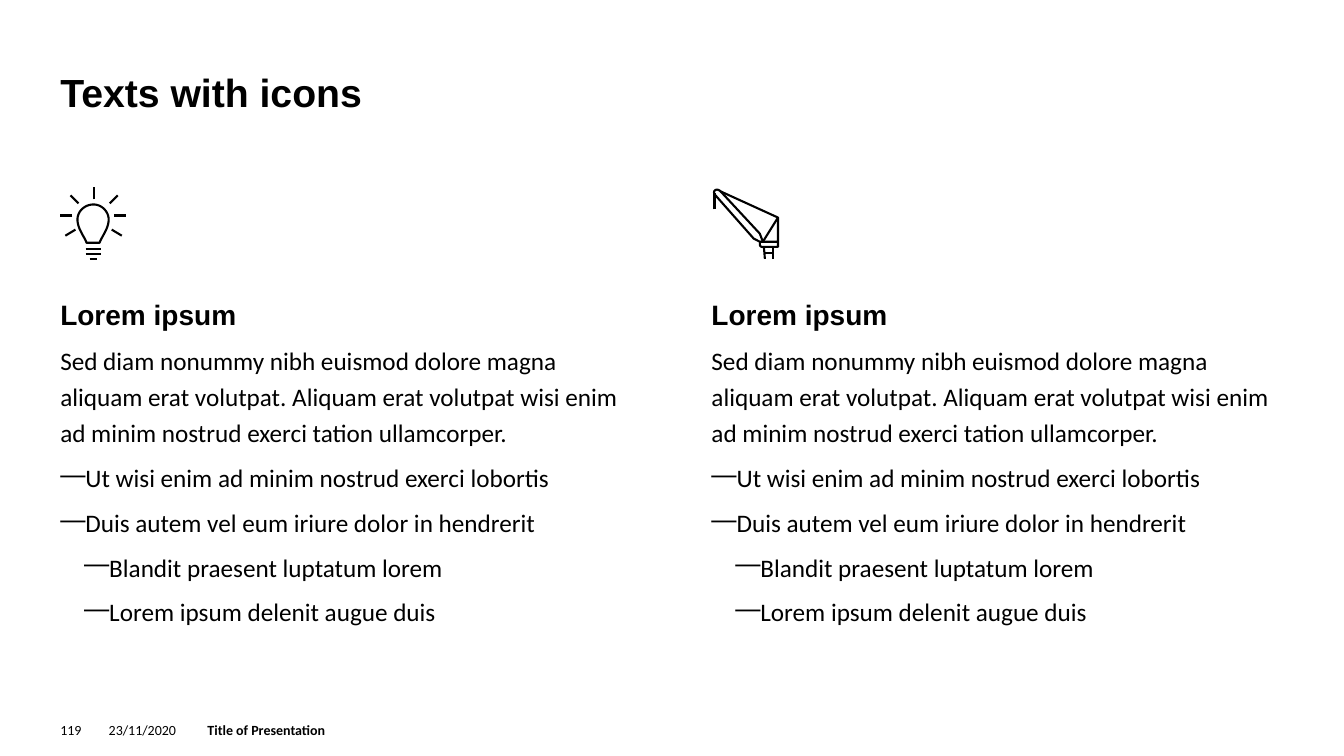
from lxml.etree import SubElement
from pptx import Presentation
from pptx.dml.color import RGBColor
from pptx.enum.shapes import MSO_CONNECTOR
from pptx.enum.text import MSO_ANCHOR, MSO_AUTO_SIZE, PP_ALIGN
from pptx.oxml.ns import qn
from pptx.util import Cm, Pt

TITLE = "Texts with icons"
HEADING = "Lorem ipsum"
BODY = [  # (level, text); levels 2 and 3 carry a dash
    (1, "Sed diam nonummy nibh euismod dolore magna aliquam erat volutpat. "
        "Aliquam erat volutpat wisi enim ad minim nostrud exerci tation ullamcorper."),
    (2, "Ut wisi enim ad minim nostrud exerci lobortis"),
    (2, "Duis autem vel eum iriure dolor in hendrerit"),
    (3, "Blandit praesent luptatum lorem"),
    (3, "Lorem ipsum delenit augue duis"),
]
FOOTER = [  # (text, left, width, bold), lengths in cm
    ("119", 1.52, 0.8, False),
    ("23/11/2020", 2.74, 2.2, False),
    ("Title of Presentation", 5.23, 21.4, True),
]

# Icons on a grid of 1/100 inch. An outline is (steps, closed);
# a step of one point is a straight line, one of three points a Bézier curve.
BULB = {
    "outlines": [
        ([[(26, 55)],
          [(24, 49), (17, 41), (17, 32)],
          [(17, 24), (24, 17), (33, 17)],
          [(41, 17), (48, 24), (48, 32)],
          [(48, 41), (41, 49), (39, 55)]], True),
    ],
    "strokes": [
        (33, 12, 33, 0), (12, 28, 0, 28), (65, 28, 53, 28), (18, 16, 10, 8),
        (57, 8, 49, 16), (61, 48, 51, 42), (15, 42, 5, 48),
        (25, 61, 40, 61), (25, 66, 40, 66), (29, 71, 36, 71),
    ],
}
CRANE = {
    "outlines": [
        ([[(48, 54)], [(42, 51)], [(4, 8)],
          [(0, 4), (5, 0), (9, 4)],
          [(48, 46)], [(51, 54)]], False),
        ([[(66, 54)], [(48, 54)], [(48, 55)],
          [(48, 57), (48, 59), (50, 59)],
          [(66, 59)], [(66, 30)], [(9, 4)]], False),
    ],
    "strokes": [
        (3, 22, 3, 6), (52, 59, 53, 71), (53, 65, 61, 65),
        (61, 71, 61, 59), (66, 30, 51, 54),
    ],
}
COLUMNS = [BULB, CRANE]

BLACK = "000000"
LEFT, COLUMN_WIDTH, COLUMN_STEP = Cm(1.52), Cm(14.61), Cm(16.41)
ICON_TOP, TEXT_TOP, TEXT_HEIGHT = Cm(4.72), Cm(7.32), Cm(9.6)
FOOTER_TOP, FOOTER_HEIGHT = Cm(18.19), Cm(0.41)
INDENT = Cm(0.6)
GRID = Cm(2.54) / 100
CURVE_STEPS = 12


def color(hex_value):
    return RGBColor.from_string(hex_value)


def set_font(paragraph, name, size, bold=False):
    font = paragraph.font
    font.name, font.size, font.bold = name, Pt(size), bold
    font.color.rgb = color(BLACK)


def prepare_frame(shape, anchor=MSO_ANCHOR.TOP):
    """Wrap the text, drop the insets and return the text frame."""
    frame = shape.text_frame
    frame.word_wrap = True
    frame.auto_size = MSO_AUTO_SIZE.NONE
    frame.vertical_anchor = anchor
    frame.margin_left = frame.margin_right = 0
    frame.margin_top = frame.margin_bottom = 0
    return frame


def add_dash(paragraph, level):
    properties = paragraph._p.get_or_add_pPr()
    properties.set("marL", str(INDENT * (level - 1)))
    properties.set("indent", str(-INDENT))
    SubElement(properties, qn("a:buChar"), char="—")


def flatten(steps):
    """Turn lines and Bézier curves into one list of points."""
    points = []
    for step in steps:
        if len(step) == 1:
            points += step
            continue
        controls = [points[-1], *step]
        for i in range(1, CURVE_STEPS + 1):
            t = i / CURVE_STEPS
            weights = ((1 - t) ** 3, 3 * t * (1 - t) ** 2, 3 * t ** 2 * (1 - t), t ** 3)
            points.append(tuple(sum(w * c[axis] for w, c in zip(weights, controls))
                                for axis in (0, 1)))
    return points


def style_stroke(shape):
    shape.line.color.rgb = color(BLACK)
    shape.line.width = Pt(1.5)


def add_icon(slide, icon, left):
    def place(x, y):
        return round(left + x * GRID), round(ICON_TOP + y * GRID)

    shapes = slide.shapes.add_group_shape().shapes
    for steps, closed in icon["outlines"]:
        start, *rest = [place(*point) for point in flatten(steps)]
        builder = shapes.build_freeform(*start)
        builder.add_line_segments(rest, close=closed)
        outline = builder.convert_to_shape()
        outline.fill.background()
        outline.shadow.inherit = False
        style_stroke(outline)
    for x1, y1, x2, y2 in icon["strokes"]:
        stroke = shapes.add_connector(MSO_CONNECTOR.STRAIGHT, *place(x1, y1), *place(x2, y2))
        style_stroke(stroke)
        SubElement(stroke._element.spPr, qn("a:effectLst"))


def add_column_text(slide, left):
    box = slide.shapes.add_textbox(left, TEXT_TOP, COLUMN_WIDTH, TEXT_HEIGHT)
    frame = prepare_frame(box)
    heading = frame.paragraphs[0]
    heading.text = HEADING
    heading.line_spacing = 1.2
    set_font(heading, "Arial", 20, bold=True)
    for level, text in BODY:
        paragraph = frame.add_paragraph()
        paragraph.text = text
        paragraph.level = level
        paragraph.line_spacing = 1.2
        paragraph.space_before = Pt(6)
        if level > 1:
            add_dash(paragraph, level)
        else:
            paragraph._p.get_or_add_pPr().set("marL", "0")
        set_font(paragraph, "Calibri", 18)


def main():
    presentation = Presentation()
    presentation.slide_width, presentation.slide_height = Cm(33.87), Cm(19.05)
    slide = presentation.slides.add_slide(presentation.slide_layouts[5])

    title = slide.shapes.title
    title.left, title.top, title.width, title.height = LEFT, Cm(1.73), Cm(31.01), Cm(1.19)
    heading = prepare_frame(title).paragraphs[0]
    heading.text = TITLE
    heading.alignment = PP_ALIGN.LEFT
    set_font(heading, "Arial", 28, bold=True)

    for index, icon in enumerate(COLUMNS):
        left = LEFT + index * COLUMN_STEP
        add_icon(slide, icon, left)
        add_column_text(slide, left)

    for text, left, width, bold in FOOTER:
        box = slide.shapes.add_textbox(Cm(left), FOOTER_TOP, Cm(width), FOOTER_HEIGHT)
        entry = prepare_frame(box, MSO_ANCHOR.MIDDLE).paragraphs[0]
        entry.text = text
        set_font(entry, "Calibri", 10, bold)

    presentation.save("out.pptx")


if __name__ == "__main__":
    main()
